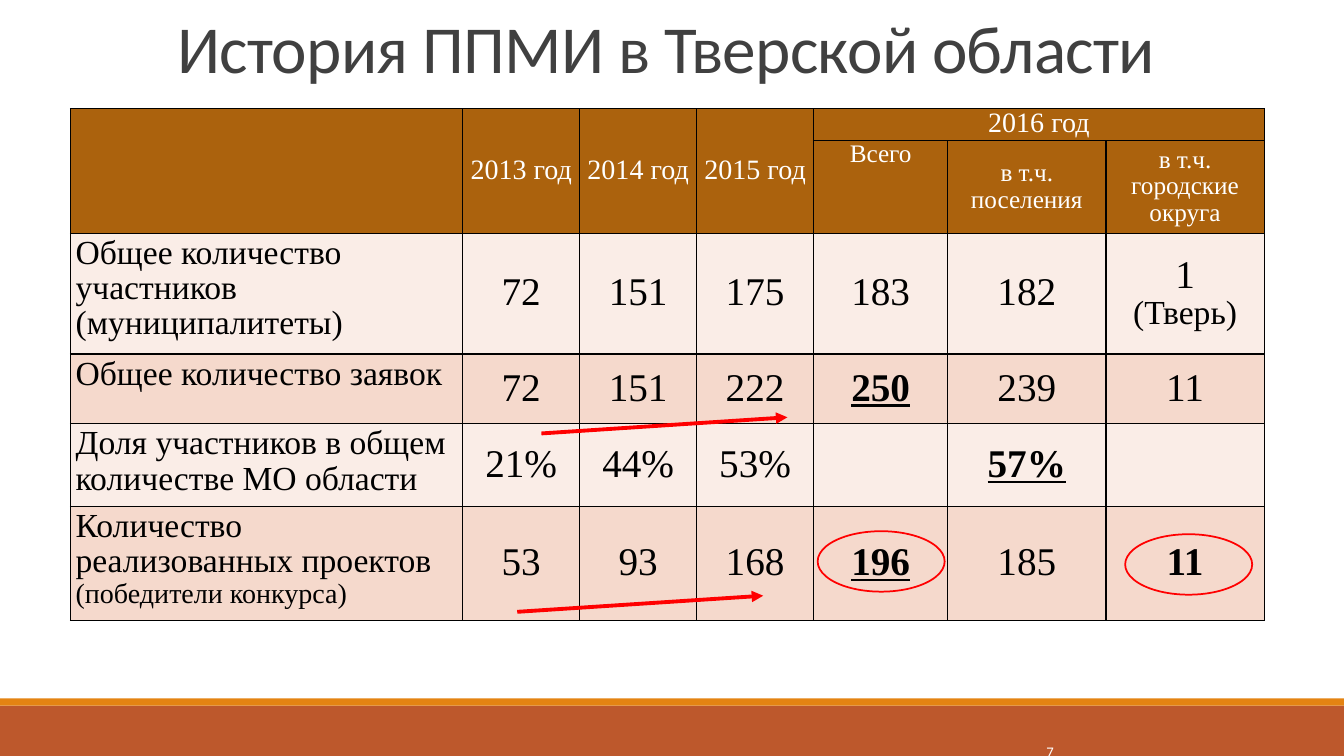
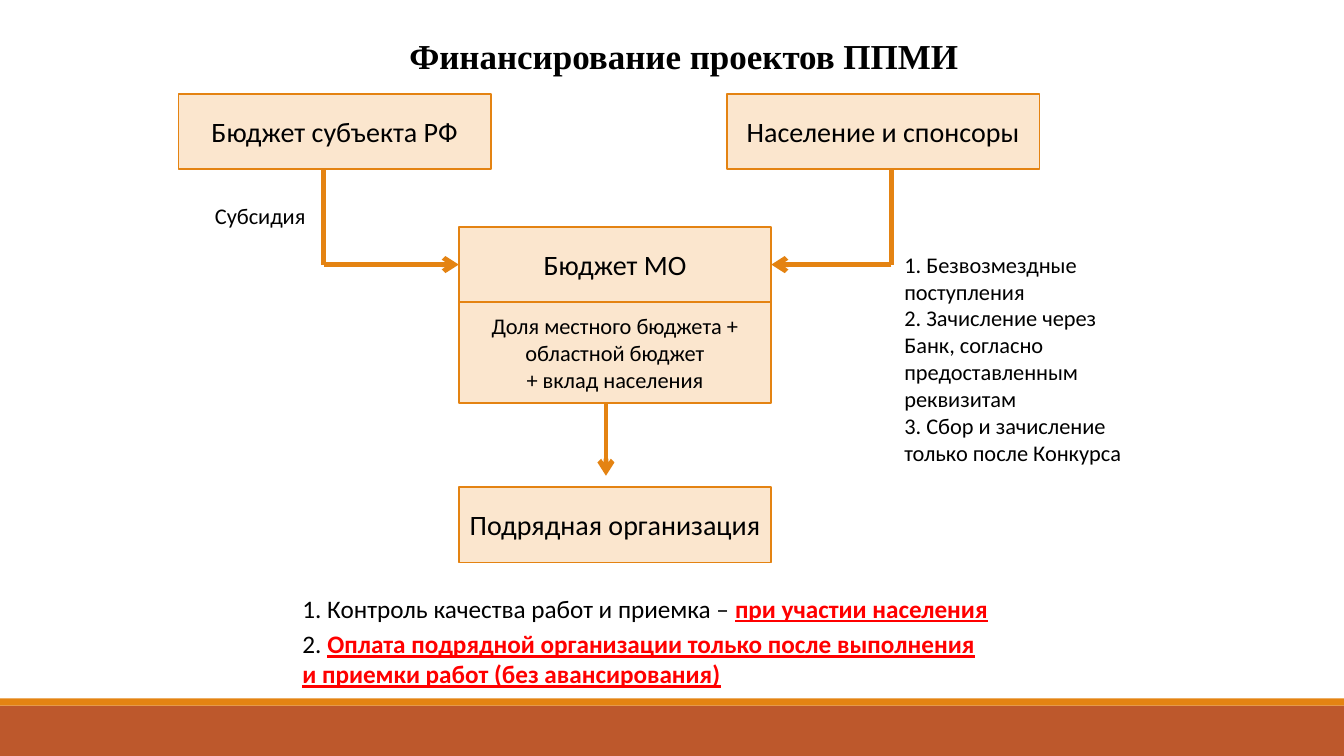
from pptx import Presentation
from pptx.dml.color import RGBColor
from pptx.enum.shapes import MSO_CONNECTOR, MSO_SHAPE
from pptx.enum.text import MSO_ANCHOR, PP_ALIGN
from pptx.oxml import parse_xml
from pptx.oxml.ns import nsdecls, qn
from pptx.util import Inches, Pt

WHITE = RGBColor(0xFF, 0xFF, 0xFF)
BLACK = RGBColor(0, 0, 0)
GREY = RGBColor(0x40, 0x40, 0x40)
RED = RGBColor(0xFF, 0, 0)
RUST = RGBColor(0xBD, 0x58, 0x2C)
ORANGE = RGBColor(0xE4, 0x83, 0x12)
CREAM = RGBColor(0xFB, 0xE6, 0xCE)
BROWN = RGBColor(0xAB, 0x62, 0x0D)
PALE = RGBColor(0xFA, 0xED, 0xE7)
PEACH = RGBColor(0xF5, 0xD9, 0xCC)
SANS = "Calibri"
SERIF = "Times New Roman"
LEFT, CENTER, RIGHT = PP_ALIGN.LEFT, PP_ALIGN.CENTER, PP_ALIGN.RIGHT
TOP, MIDDLE = MSO_ANCHOR.TOP, MSO_ANCHOR.MIDDLE


def write(frame, lines, size=18, font=SANS, color=BLACK, bold=False,
          line=False, align=LEFT, anchor=MIDDLE, pad=None, space=None):
    frame.word_wrap = True
    frame.vertical_anchor = anchor
    if pad is not None:
        frame.margin_left = frame.margin_right = Inches(pad)
        frame.margin_top = frame.margin_bottom = Inches(pad)
    for i, runs in enumerate(lines):
        para = frame.add_paragraph() if i else frame.paragraphs[0]
        para.alignment = align
        if space:
            para.line_spacing = space
        for text, own in [(runs, {})] if isinstance(runs, str) else runs:
            run = para.add_run()
            run.text = text
            run.font.name = font
            run.font.size = Pt(own.get("size", size))
            run.font.color.rgb = own.get("color", color)
            run.font.bold = own.get("bold", bold)
            run.font.underline = own.get("line", line)


def link(slide, ends, color, width, head=None):
    wire = slide.shapes.add_connector(MSO_CONNECTOR.STRAIGHT, *map(Inches, ends))
    wire.line.color.rgb = color
    wire.line.width = Pt(width)
    if head:
        wire.line.fill
        edge = wire.element.find(".//" + qn("a:ln"))
        edge.append(parse_xml(f'<a:tailEnd {nsdecls("a")} type="{head}"/>'))
    wire.element.spPr.append(parse_xml(f'<a:effectLst {nsdecls("a")}/>'))
    return wire


deck = Presentation()
deck.slide_width, deck.slide_height = Inches(13.33), Inches(7.5)
blank = deck.slide_layouts[6]
past = deck.slides.add_slide(blank)
funds = deck.slides.add_slide(blank)

for top, high, color in [(7, 0.5, RUST), (6.93, 0.07, ORANGE)]:
    band = past.shapes.add_shape(
        MSO_SHAPE.RECTANGLE, 0, Inches(top), deck.slide_width, Inches(high))
    band.shadow.inherit = False
    band.fill.solid()
    band.fill.fore_color.rgb = color
    band.line.fill.background()
    blank.shapes.element.append(band.element)

page = past.shapes.add_textbox(*map(Inches, (7.67, 7.26, 2.88, 0.4)))
write(page.text_frame, ["7"], size=10.5, color=WHITE, align=RIGHT)

title = past.shapes.add_textbox(*map(Inches, (1.66, 0.14, 10.65, 0.53)))
write(title.text_frame, ["История ППМИ в Тверской области"],
      size=48, color=GREY, anchor=TOP, space=0.85)
for mark in title.element.iter(qn("a:rPr")):
    mark.set("spc", "-50")

wides = [3.89, 1.16, 1.16, 1.16, 1.33, 1.57, 1.57]
highs = [0.31, 0.9, 1.16, 0.69, 0.79, 1.1]
strong = {"bold": True, "line": True}
data = [
    ["", "2013 год", "2014 год", "2015 год", "2016 год", "", ""],
    ["", "", "", "", "Всего", "в т.ч. поселения", "в т.ч. городские округа"],
    ["Общее количество участников (муниципалитеты)",
     "72", "151", "175", "183", "182", ["1", [("(Тверь)", {"size": 24})]]],
    ["Общее количество заявок",
     "72", "151", "222", [[("250", strong)]], "239", "11"],
    ["Доля участников в общем количестве МО области",
     "21%", "44%", "53%", "", [[("57%", strong)]], ""],
    [["Количество реализованных проектов",
      [("(победители конкурса)", {"size": 20})]],
     "53", "93", "168", [[("196", strong)]], "185", [[("11", {"bold": True})]]],
]
grid = past.shapes.add_table(
    len(highs), len(wides), Inches(0.7), Inches(1.08),
    Inches(sum(wides)), Inches(sum(highs)))
table = grid.table
table.first_row = table.horz_banding = False
for i, wide in enumerate(wides):
    table.columns[i].width = Inches(wide)
for i, high in enumerate(highs):
    table.rows[i].height = Inches(high)
for col in range(4):
    table.cell(0, col).merge(table.cell(1, col))
table.cell(0, 4).merge(table.cell(0, 6))

for row, items in enumerate(data):
    for col, item in enumerate(items):
        cell = table.cell(row, col)
        cell.fill.solid()
        cell.fill.fore_color.rgb = BROWN if row < 2 else (PALE, PEACH)[row % 2]
        cell.margin_left = cell.margin_right = Inches(0 if col == 4 else 0.05)
        cell.margin_top = cell.margin_bottom = Inches(0 if col == 4 else 0.03)
        high = col == 0 or (row < 2 and col == 4)
        cell.vertical_anchor = TOP if high else MIDDLE
        if item:
            size = (20, 18)[row] if row < 2 else 28 if col else 24
            write(cell.text_frame, [item] if isinstance(item, str) else item,
                  size=size, font=SERIF, color=WHITE if row < 2 else BLACK,
                  align=CENTER if col else LEFT, anchor=None, space=0.95)

for props in grid.element.iter(qn("a:tcPr")):
    for i, side in enumerate("LRTB"):
        props.insert(i, parse_xml(
            f'<a:ln{side} {nsdecls("a")} w="12700"><a:solidFill>'
            f'<a:srgbClr val="{BLACK}"/></a:solidFill></a:ln{side}>'))

for left, top in [(11.16, 5.3), (8.11, 5.27)]:
    ring = past.shapes.add_shape(
        MSO_SHAPE.OVAL, *map(Inches, (left, top, 1.26, 0.6)))
    ring.shadow.inherit = False
    ring.fill.background()
    ring.line.color.rgb = RED
    ring.line.width = Pt(1.25)
for left, top in [(5.37, 4.3), (5.13, 6.07)]:
    link(past, (left, top, left + 2.44, top - 0.16), RED, 2.75, "triangle")

title = funds.shapes.add_textbox(*map(Inches, (2.72, 0.29, 8.12, 0.53)))
write(title.text_frame, ["Финансирование проектов ППМИ"],
      size=25, font=SERIF, bold=True, align=CENTER)

boxes = []
for left, top, high, size, lines in [
    (1.77, 0.93, 0.75, 20, ["Бюджет субъекта РФ"]),
    (7.21, 0.93, 0.75, 20, ["Население и спонсоры"]),
    (4.55, 2.25, 0.75, 20, ["Бюджет МО"]),
    (4.55, 3, 1, 16,
     ["Доля местного бюджета + областной бюджет", "+ вклад населения"]),
    (4.55, 4.83, 0.75, 20, ["Подрядная организация"]),
]:
    box = funds.shapes.add_shape(
        MSO_SHAPE.RECTANGLE, *map(Inches, (left, top, 3.1, high)))
    box.shadow.inherit = False
    box.fill.solid()
    box.fill.fore_color.rgb = CREAM
    box.line.color.rgb = ORANGE
    box.line.width = Pt(1.25)
    write(box.text_frame, lines, size=size, align=CENTER, pad=0.04)
    boxes.append(box)

mid = 2.25 + 0.75 / 2
for start, end, side in [(3.21, 4.55, 1), (8.84, 7.65, 3)]:
    link(funds, (start, 1.68, start, mid), ORANGE, 3.5)
    wire = link(funds, (start, mid, end, mid), ORANGE, 3.5, "arrow")
    wire.end_connect(boxes[2], side)
link(funds, (6.01, 4, 6.01, 4.72), ORANGE, 3.5, "arrow")

alert = {"color": RED, "bold": True, "line": True}
for place, size, align, lines in [
    ((1.4, 1.72, 1.72, 0.84), 16, RIGHT, ["Субсидия "]),
    ((8.93, 1.72, 2.33, 3.67), 16, LEFT, [
        "1. Безвозмездные поступления",
        "2. Зачисление через Банк, согласно предоставленным реквизитам",
        "3. Сбор и зачисление только после Конкурса"]),
    ((2.96, 5.58, 7.24, 0.91), 18, LEFT, [[
        ("1. Контроль качества работ и приемка – ", {}),
        ("при участии населения", alert)]]),
    ((2.96, 6.01, 6.86, 1.05), 18, LEFT, [[
        ("2. ", {}),
        ("Оплата подрядной организации только после выполнения "
         "и приемки работ (без авансирования)", alert)]]),
]:
    note = funds.shapes.add_textbox(*map(Inches, place))
    write(note.text_frame, lines, size=size, align=align, pad=0.04)

deck.save("out.pptx")
